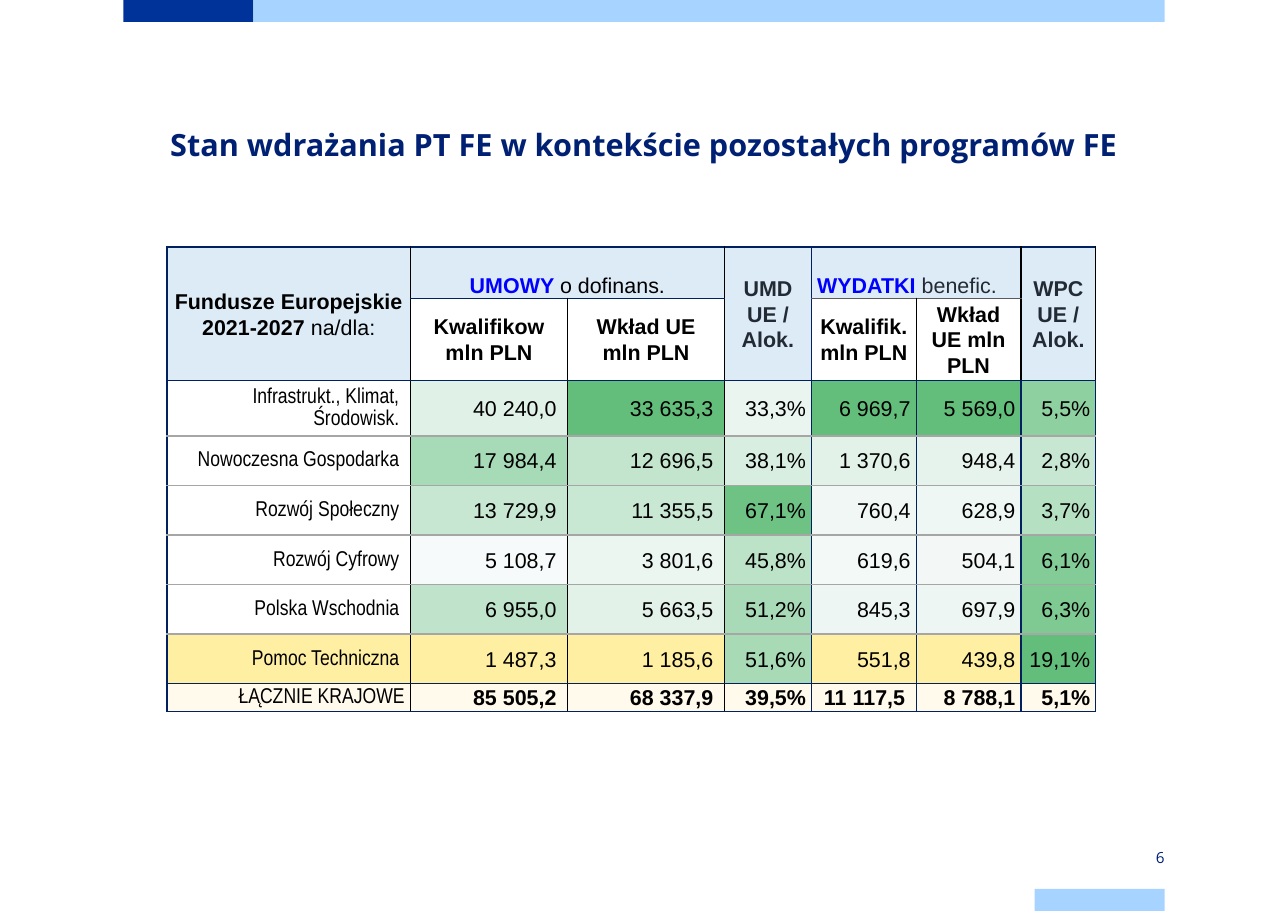
from lxml.etree import SubElement
from pptx import Presentation
from pptx.dml.color import RGBColor
from pptx.enum.shapes import MSO_SHAPE
from pptx.enum.text import MSO_ANCHOR, PP_ALIGN
from pptx.oxml.ns import qn
from pptx.util import Pt

COLORS = {
    "royal": "003399", "sky": "A6D3FF", "title": "002073", "navy": "002060",
    "black": "000000", "slate": "222B35", "link": "0000FF", "grey": "A6A6A6",
    "dark_grey": "595959", "white": "FFFFFF", "head": "DDEBF7",
    "yellow": "FFEFA3", "cream": "FFFAEB",
}
TITLE = "Stan wdrażania PT FE w kontekście pozostałych programów FE"
PAGE = "6"
BANDS = [  # left, top, width, colour
    (80.64, 0, 84.96, "royal"),
    (165.6, 0, 595.44, "sky"),
    (676.08, 581.04, 84.96, "sky"),
]
BAND_HEIGHT = 14.4

# row, column, rows spanned, columns spanned, fill, paragraphs of (text, colour, bold)
HEADERS = [
    (0, 0, 2, 1, "head", [[("Fundusze Europejskie 2021-2027 ", "black", True),
                           ("na/dla:", "black", False)]]),
    (0, 1, 1, 2, "head", [[("UMOWY ", "link", True), ("o dofinans.", "black", False)]]),
    (0, 3, 2, 1, "head", [[(t, "slate", True)] for t in ("UMD", "UE /", "Alok.")]),
    (0, 4, 1, 2, "head", [[("WYDATKI ", "link", True), ("benefic.", "slate", False)]]),
    (0, 6, 2, 1, "head", [[(t, "slate", True)] for t in ("WPC", "UE /", "Alok.")]),
    (1, 1, 1, 1, "white", [[("Kwalifikow mln PLN", "black", True)]]),
    (1, 2, 1, 1, "white", [[(t, "black", True)] for t in ("Wkład UE", "mln PLN")]),
    (1, 4, 1, 1, "white", [[("Kwalifik. mln PLN", "black", True)]]),
    (1, 5, 1, 1, "white", [[("Wkład UE mln PLN", "black", True)]]),
]
PROGRAMMES = [
    ("Infrastrukt., Klimat, Środowisk.", "40 240,0", "33 635,3", "33,3%", "6 969,7", "5 569,0", "5,5%"),
    ("Nowoczesna Gospodarka", "17 984,4", "12 696,5", "38,1%", "1 370,6", "948,4", "2,8%"),
    ("Rozwój Społeczny", "13 729,9", "11 355,5", "67,1%", "760,4", "628,9", "3,7%"),
    ("Rozwój Cyfrowy", "5 108,7", "3 801,6", "45,8%", "619,6", "504,1", "6,1%"),
    ("Polska Wschodnia", "6 955,0", "5 663,5", "51,2%", "845,3", "697,9", "6,3%"),
    ("Pomoc Techniczna", "1 487,3", "1 185,6", "51,6%", "551,8", "439,8", "19,1%"),
    ("ŁĄCZNIE KRAJOWE", "85 505,2", "68 337,9", "39,5%", "11 117,5", "8 788,1", "5,1%"),
]
HEATMAP = [
    ("white", "E0F1E7", "63BE7B", "EAF5F0", "63BE7B", "63BE7B", "8FD0A1"),
    ("white", "A7DAB6", "C3E5CE", "D8EEE0", "E2F2E8", "E6F3EC", "C8E7D2"),
    ("white", "C8E7D2", "C9E8D3", "6DC284", "F0F7F4", "EFF7F4", "B5E0C2"),
    ("white", "F6FAFA", "EBF6F1", "BCE2C8", "F3F9F7", "F3F8F7", "84CC97"),
    ("white", "C0E4CB", "E3F2E9", "A8DAB7", "EEF6F3", "EDF6F2", "7FCA93"),
    ("yellow", "yellow", "yellow", "A7DAB5", "yellow", "yellow", "63BE7B"),
    ("cream",) * 7,
]
COL_WIDTHS = [159, 102.8, 102.5, 56.9, 68.4, 68.4, 49]
ROW_HEIGHTS = [33.5, 51.6] + [32.4] * 6 + [17.3]
HEADER_ROWS = 2
TOTAL_ROW = len(ROW_HEIGHTS) - 1
MARGIN, INDENTED = 3.6, 7.2


def rgb(color):
    return RGBColor.from_string(COLORS.get(color, color))


def add_run(p, text, size, font, color, bold=False):
    r = p.add_run()
    r.text = text
    r.font.size, r.font.name, r.font.bold = Pt(size), font, bold
    r.font.color.rgb = rgb(color)


def add_text(slide, box, text, size, align, anchor, inset=0, bold=False):
    tf = slide.shapes.add_textbox(*map(Pt, box)).text_frame
    tf.word_wrap = True
    tf.vertical_anchor = anchor
    tf.margin_left = tf.margin_right = 0
    tf.margin_top = tf.margin_bottom = Pt(inset)
    p = tf.paragraphs[0]
    p.alignment = align
    add_run(p, text, size, "Open Sans", "title", bold)
    return p


def column_line(col, row):
    """Colour of the vertical line to the left of a column."""
    return "black" if col in (1, 2, 3) or (col >= 5 and row < HEADER_ROWS) else "navy"


def row_line(row, col):
    """Colour of the horizontal line above a row."""
    if row == 1 and col >= 4:
        return "dark_grey"
    return "grey" if HEADER_ROWS < row < TOTAL_ROW else "navy"


def style_cell(cell, row, col, fill, rows=1, cols=1, right=MARGIN):
    tcPr = cell._tc.get_or_add_tcPr()
    lines = (("a:lnL", column_line(col, row)), ("a:lnR", column_line(col + cols, row)),
             ("a:lnT", row_line(row, col)), ("a:lnB", row_line(row + rows, col)))
    for tag, color in lines:
        ln = SubElement(tcPr, qn(tag), w=str(Pt(1)))
        SubElement(SubElement(ln, qn("a:solidFill")), qn("a:srgbClr"), val=COLORS[color])
    cell.fill.solid()
    cell.fill.fore_color.rgb = rgb(fill)
    cell.margin_left, cell.margin_right = Pt(MARGIN), Pt(right)
    cell.margin_top = cell.margin_bottom = 0
    cell.vertical_anchor = MSO_ANCHOR.MIDDLE


def add_paragraph(cell, index, align):
    tf = cell.text_frame
    p = tf.add_paragraph() if index else tf.paragraphs[0]
    p.alignment = align
    p.line_spacing = 1.07
    return p


def fill_headers(table):
    for row, col, rows, cols, fill, paragraphs in HEADERS:
        cell = table.cell(row, col)
        if rows * cols > 1:
            cell.merge(table.cell(row + rows - 1, col + cols - 1))
        style_cell(cell, row, col, fill, rows, cols)
        if cols > 1:
            cell.vertical_anchor = MSO_ANCHOR.BOTTOM
        align = PP_ALIGN.LEFT if (row, col) == (0, 4) else PP_ALIGN.CENTER
        for i, runs in enumerate(paragraphs):
            p = add_paragraph(cell, i, align)
            for text, color, bold in runs:
                add_run(p, text, 14, "Arial", color, bold)


def fill_programmes(table):
    for row, (values, fills) in enumerate(zip(PROGRAMMES, HEATMAP), HEADER_ROWS):
        total = row == TOTAL_ROW
        indented_cols = (1, 2, 4) if total else (0, 1, 2)
        for col, (text, fill) in enumerate(zip(values, fills)):
            cell = table.cell(row, col)
            style_cell(cell, row, col, fill, right=INDENTED if col in indented_cols else MARGIN)
            p = add_paragraph(cell, 0, PP_ALIGN.RIGHT)
            add_run(p, text, 14, "Arial" if col else "Arial Narrow", "black", total and col > 0)


def main():
    prs = Presentation()
    prs.slide_width, prs.slide_height = Pt(841.68), Pt(595.44)
    slide = prs.slides.add_slide(prs.slide_layouts[6])

    for left, top, width, color in BANDS:
        sp = slide.shapes.add_shape(MSO_SHAPE.RECTANGLE, Pt(left), Pt(top), Pt(width), Pt(BAND_HEIGHT))
        sp.shadow.inherit = False
        sp.fill.solid()
        sp.fill.fore_color.rgb = rgb(color)
        sp.line.fill.background()

    title = add_text(slide, (80.64, 70.56, 680.4, 84.96), TITLE, 20,
                     PP_ALIGN.CENTER, MSO_ANCHOR.TOP, bold=True)
    title.line_spacing = Pt(36)

    frame = slide.shapes.add_table(len(ROW_HEIGHTS), len(COL_WIDTHS), Pt(109.2), Pt(161.5),
                                   Pt(sum(COL_WIDTHS)), Pt(sum(ROW_HEIGHTS)))
    table = frame.table
    table.first_row = table.horz_banding = False
    for column, width in zip(table.columns, COL_WIDTHS):
        column.width = Pt(width)
    for table_row, height in zip(table.rows, ROW_HEIGHTS):
        table_row.height = Pt(height)
    fill_headers(table)
    fill_programmes(table)

    add_text(slide, (676.08, 552.96, 84.96, 14.4), PAGE, 10,
             PP_ALIGN.RIGHT, MSO_ANCHOR.MIDDLE, inset=5.76)
    prs.save("out.pptx")


if __name__ == "__main__":
    main()
